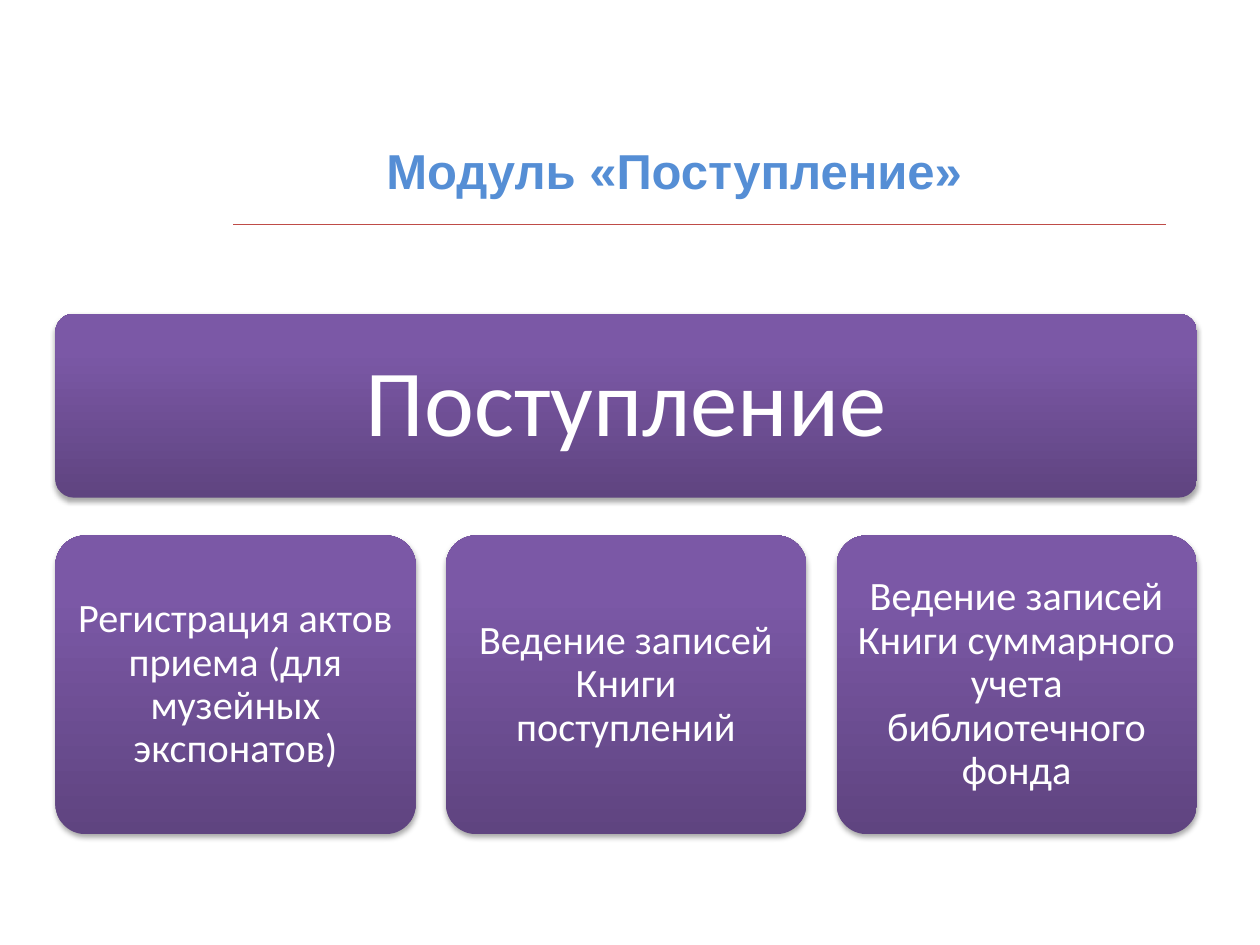
from copy import deepcopy
from dataclasses import dataclass

from lxml import etree
from pptx import Presentation
from pptx.dml.color import RGBColor
from pptx.enum.shapes import MSO_CONNECTOR, MSO_SHAPE
from pptx.enum.text import MSO_ANCHOR, PP_ALIGN
from pptx.oxml.ns import qn
from pptx.util import Inches, Pt

ROUNDED = MSO_SHAPE.ROUNDED_RECTANGLE
STRAIGHT = MSO_CONNECTOR.STRAIGHT
MIDDLE, TOP = MSO_ANCHOR.MIDDLE, MSO_ANCHOR.TOP
CENTER = PP_ALIGN.CENTER

WHITE = RGBColor(0xFF, 0xFF, 0xFF)
BLUE = RGBColor(0x55, 0x8E, 0xD5)
RED = RGBColor(0xBF, 0x4C, 0x48)
BLACK = RGBColor(0, 0, 0)
PURPLES = (
    (0, RGBColor(0x5F, 0x44, 0x80)),
    (0.8, RGBColor(0x7B, 0x58, 0xA6)),
    (1, RGBColor(0x7C, 0x57, 0xA8)),
)

# Three columns; the header card spans them all (inches)
LEFT, COLUMN, GAP = 0.44, 2.86, 0.24
HEADER_TOP, HEADER_HEIGHT = 2.49, 1.46
ROW_TOP, ROW_HEIGHT = 4.25, 2.37


@dataclass
class Card:
    text: str
    column: int
    span: int = 1
    top: float = ROW_TOP
    height: float = ROW_HEIGHT
    size: int = 23
    inset: float = 0.1


CARDS = [
    Card("Поступление", 0, 3, HEADER_TOP, HEADER_HEIGHT, 54, 0.23),
    Card("Регистрация актов приема (для музейных экспонатов)", 0),
    Card("Ведение записей Книги поступлений", 1),
    Card("Ведение записей Книги суммарного учета библиотечного фонда", 2),
]


def write_text(tf, text: str, *, size: int, color: RGBColor, font: str = "Calibri",
               bold: bool = False, anchor=MIDDLE, spacing: float = 1.0) -> None:
    tf.word_wrap = True
    tf.vertical_anchor = anchor
    p = tf.paragraphs[0]
    p.alignment = CENTER
    p.line_spacing = spacing
    r = p.add_run()
    r.text = text
    r.font.name, r.font.size, r.font.bold = font, Pt(size), bold
    r.font.color.rgb = color


def fill_gradient(s) -> None:
    """Fill with the purple stops, running from bottom to top."""
    s.fill.gradient()
    s.fill.gradient_angle = 90
    stops = s._element.spPr.find(".//" + qn("a:gsLst"))
    stops.append(deepcopy(stops[-1]))
    for stop, (position, color) in zip(s.fill.gradient_stops, PURPLES):
        stop.position = position
        stop.color.rgb = color


def add_shadow(s) -> None:
    s.shadow.inherit = False
    effects = s._element.spPr.find(qn("a:effectLst"))
    shadow = etree.SubElement(effects, qn("a:outerShdw"), blurRad=str(Pt(3.1)),
                              dist=str(Pt(1.8)), dir="5400000", rotWithShape="0")
    color = etree.SubElement(shadow, qn("a:srgbClr"), val=str(BLACK))
    etree.SubElement(color, qn("a:alpha"), val="35000")


def add_card(slide, card: Card) -> None:
    left = LEFT + card.column * (COLUMN + GAP)
    width = card.span * (COLUMN + GAP) - GAP
    s = slide.shapes.add_shape(ROUNDED, Inches(left), Inches(card.top),
                               Inches(width), Inches(card.height))
    s.adjustments[0] = 0.1
    fill_gradient(s)
    s.line.fill.background()
    add_shadow(s)
    tf = s.text_frame
    tf.margin_left = tf.margin_right = Inches(card.inset)
    tf.margin_top = tf.margin_bottom = Inches(card.inset)
    write_text(tf, card.text, size=card.size, color=WHITE, spacing=0.9)


def add_title(slide) -> None:
    box = slide.shapes.add_textbox(Inches(1.69), Inches(1.07), Inches(7.32), Inches(0.57))
    write_text(box.text_frame, "Модуль «Поступление»", size=28, color=BLUE,
               font="Arial", bold=True, anchor=TOP)
    rule = slide.shapes.add_connector(STRAIGHT, Inches(1.85), Inches(1.78),
                                      Inches(9.25), Inches(1.78))
    rule.line.color.rgb = RED
    rule.line.width = Pt(0.75)
    etree.SubElement(rule._element.spPr, qn("a:effectLst"))


def main() -> None:
    prs = Presentation()
    prs.slide_width, prs.slide_height = Inches(10), Inches(7.5)
    slide = prs.slides.add_slide(prs.slide_layouts[6])
    for card in CARDS:
        add_card(slide, card)
    add_title(slide)
    prs.save("out.pptx")


if __name__ == "__main__":
    main()
